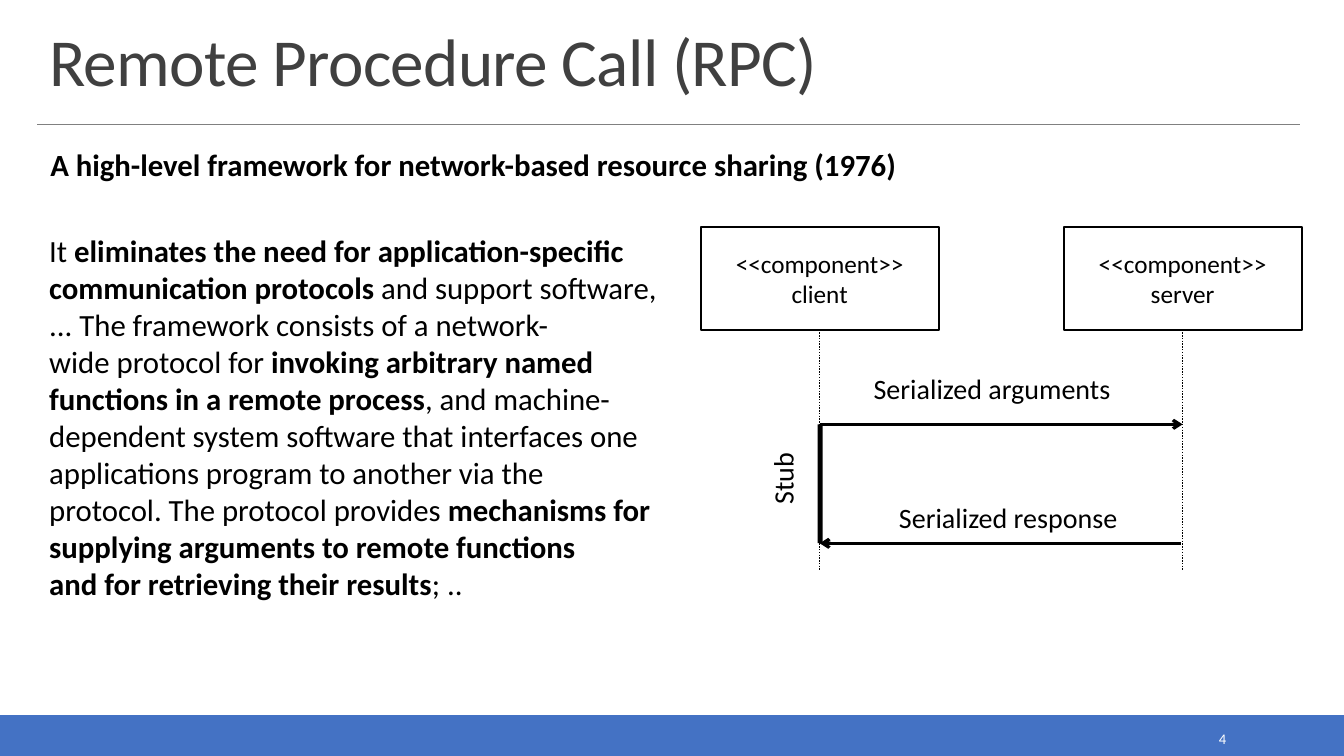
from dataclasses import dataclass

import pptx
import pptx.dml.color
import pptx.enum.dml
import pptx.enum.shapes
import pptx.enum.text
import pptx.oxml.ns
import pptx.util
from lxml import etree
from pptx.util import Inches

ALIGN = pptx.enum.text.PP_ALIGN
ANCHOR = pptx.enum.text.MSO_ANCHOR


@dataclass(frozen=True)
class Theme:
    font: str = "Calibri"
    ink: str = "000000"
    heading: str = "404040"
    rule: str = "808080"
    band: str = "4472C4"
    paper: str = "FFFFFF"
    title_size: float = 48
    body_size: float = 22
    message_size: float = 20
    component_size: float = 18
    number_size: float = 10.5


THEME = Theme()

HEADLINE = [[("A high-level framework for network-based resource sharing (1976)", True)]]
QUOTE = [
    [
        ("It ", False),
        ("eliminates the need for application-specific communication protocols", True),
        (" and support software, ... The framework consists of a network-", False),
    ],
    [
        ("wide protocol for ", False),
        ("invoking arbitrary named functions in a remote process", True),
        (", and machine-dependent system software that interfaces one applications "
         "program to another via the protocol. The protocol provides ", False),
        ("mechanisms for supplying arguments to remote functions", True),
    ],
    [("and for retrieving their results", True), ("; ..", False)],
]


def color(value):
    return pptx.dml.color.RGBColor.from_string(value)


def plain(text):
    return [[(text, False)]]


def write(frame, paragraphs, size, ink=THEME.ink, align=ALIGN.LEFT, anchor=ANCHOR.TOP):
    frame.word_wrap = True
    frame.vertical_anchor = anchor
    for index, runs in enumerate(paragraphs):
        paragraph = frame.add_paragraph() if index else frame.paragraphs[0]
        paragraph.alignment = align
        for text, bold in runs:
            run = paragraph.add_run()
            run.text = text
            run.font.name = THEME.font
            run.font.size = pptx.util.Pt(size)
            run.font.bold = bold
            run.font.color.rgb = color(ink)


def add_title(slide, text):
    title = slide.shapes.title
    title.left, title.top = Inches(0.39), Inches(0.2)
    title.width, title.height = Inches(12.52), Inches(0.84)
    write(title.text_frame, plain(text), THEME.title_size, THEME.heading, anchor=ANCHOR.BOTTOM)
    paragraph = title.text_frame.paragraphs[0]
    paragraph.line_spacing = 0.85
    paragraph.runs[0]._r.get_or_add_rPr().set("spc", "-50")


def add_text(slide, left, top, width, height, paragraphs, size, rotation=0, **style):
    box = slide.shapes.add_textbox(Inches(left), Inches(top), Inches(width), Inches(height))
    box.rotation = rotation
    write(box.text_frame, paragraphs, size, **style)


def add_box(slide, left, top, width, height, fill=None, line=None, weight=1.5):
    box = slide.shapes.add_shape(
        pptx.enum.shapes.MSO_SHAPE.RECTANGLE,
        Inches(left), Inches(top), Inches(width), Inches(height),
    )
    box.shadow.inherit = False
    if fill:
        box.fill.solid()
        box.fill.fore_color.rgb = color(fill)
    else:
        box.fill.background()
    if line:
        box.line.color.rgb = color(line)
        box.line.width = pptx.util.Pt(weight)
    else:
        box.line.fill.background()
    return box


def add_line(slide, start, end, weight, ink=THEME.ink, dotted=False, arrow=False):
    connector = slide.shapes.add_connector(
        pptx.enum.shapes.MSO_CONNECTOR.STRAIGHT,
        Inches(start[0]), Inches(start[1]), Inches(end[0]), Inches(end[1]),
    )
    connector.line.color.rgb = color(ink)
    connector.line.width = pptx.util.Pt(weight)
    if dotted:
        connector.line.dash_style = pptx.enum.dml.MSO_LINE.ROUND_DOT
    if arrow:
        tail = etree.SubElement(connector.line._get_or_add_ln(), pptx.oxml.ns.qn("a:tailEnd"))
        tail.set("type", "arrow")
    etree.SubElement(connector._element.spPr, pptx.oxml.ns.qn("a:effectLst"))


def add_component(slide, name, center):
    width, top, height = 2.36, 2.25, 1.02
    box = add_box(slide, center - width / 2, top, width, height, line=THEME.ink)
    write(
        box.text_frame, plain("<<component>>") + plain(name), THEME.component_size,
        align=ALIGN.CENTER, anchor=ANCHOR.MIDDLE,
    )
    add_line(slide, (center, top + height), (center, 5.65), 1, dotted=True)


def add_label(slide, left, top, width, text, rotation=0):
    add_text(
        slide, left, top, width, 0.44, plain(text), THEME.message_size,
        rotation, align=ALIGN.CENTER,
    )


def add_sequence(slide):
    client, server = 8.13, 11.73
    call, reply = 4.21, 5.39
    add_component(slide, "client", client)
    add_component(slide, "server", server)
    add_line(slide, (client, call), (server, call), 2.25, arrow=True)
    add_line(slide, (server - 0.02, reply), (client, reply), 2.25, arrow=True)
    add_label(slide, 8.11, 3.64, 3.46, "Serialized arguments")
    add_label(slide, 8.27, 4.92, 3.46, "Serialized response")
    add_box(slide, client - 0.02, call, 0.05, reply - call, fill=THEME.ink)
    add_label(slide, 7.19, 4.53, 1.15, "Stub", rotation=270)


def main():
    presentation = pptx.Presentation()
    presentation.slide_width = Inches(13.33)
    presentation.slide_height = Inches(7.5)
    slide = presentation.slides.add_slide(presentation.slide_layouts.get_by_name("Title Only"))

    add_box(slide, 0, 7.1, 13.33, 0.4, fill=THEME.band, line=THEME.band, weight=1.25)
    add_line(slide, (0.37, 1.23), (12.89, 1.23), 0.5, ink=THEME.rule)
    add_title(slide, "Remote Procedure Call (RPC)")
    add_text(
        slide, 10.83, 7.19, 1.43, 0.28, plain("4"), THEME.number_size,
        ink=THEME.paper, align=ALIGN.RIGHT, anchor=ANCHOR.MIDDLE,
    )
    add_text(slide, 0.4, 1.4, 8.92, 0.47, HEADLINE, THEME.body_size)
    add_text(slide, 0.39, 2.25, 6.27, 4.17, QUOTE, THEME.body_size)
    add_sequence(slide)

    presentation.save("out.pptx")


if __name__ == "__main__":
    main()
